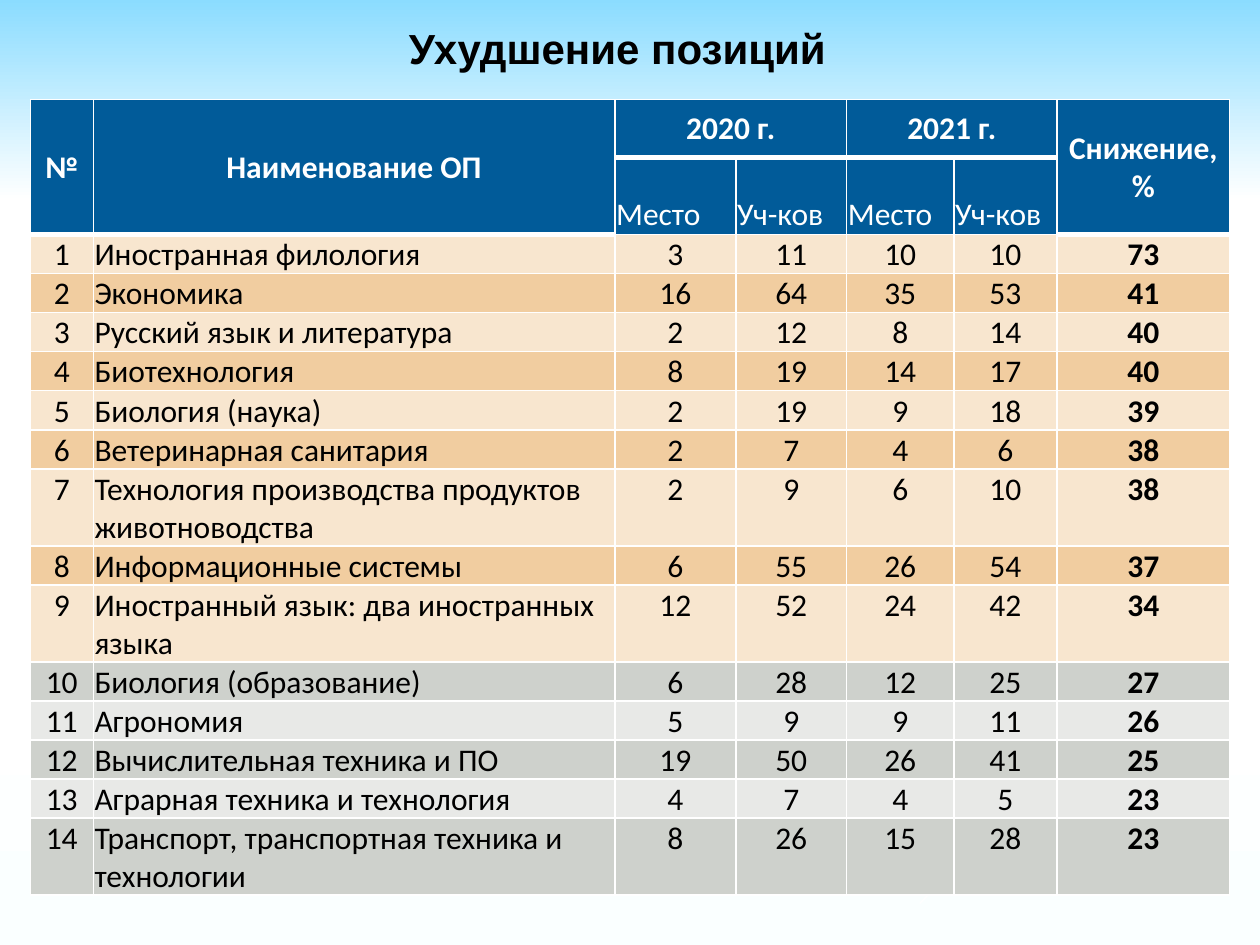
from lxml import etree
from pptx import Presentation
from pptx import util as u
from pptx.dml.color import RGBColor
from pptx.enum import shapes, text
from pptx.oxml.ns import qn

COLORS = {"white": "FFFFFF", "black": "000000", "header": "015B99",
          "orange": "F1CDA0", "cream": "F8E6CF", "grey": "CED1CC", "pale": "E8E9E7"}
SKY = [(2, "FAFFFF"), (26, "FFFFFF"), (79, "FEFFFF"), (100, "8BDCFF")]
RAYS = [(10, 4.26, 9.17, 5.09, 0.75), (10, 4.46, 7.3, 7.17, 0.75),
        (10, 4.55, 8.28, 6.27, 0.75), (9.99, 4.42, 8.42, 5.99, 2.25),
        (9.99, 4.92, 8.85, 6.06, 2.25)]
WIDTHS = [0.5, 4.14, 0.96, 0.88, 0.85, 0.82, 1.37]
HEADERS = [["№", "Наименование ОП", "2020 г.", "", "2021 г.", "", "Снижение, %"],
           ["", "", "Место", "Уч-ков", "Место", "Уч-ков", ""]]
MERGES = [(0, 0, 1, 0), (0, 1, 1, 1), (0, 2, 0, 3), (0, 4, 0, 5), (0, 6, 1, 6)]
PROGRAMS = [
    ("Иностранная филология", 3, 11, 10, 10, 73),
    ("Экономика", 16, 64, 35, 53, 41),
    ("Русский язык и литература", 2, 12, 8, 14, 40),
    ("Биотехнология", 8, 19, 14, 17, 40),
    ("Биология (наука)", 2, 19, 9, 18, 39),
    ("Ветеринарная санитария", 2, 7, 4, 6, 38),
    ("Технология производства продуктов животноводства", 2, 9, 6, 10, 38),
    ("Информационные системы", 6, 55, 26, 54, 37),
    ("Иностранный язык: два иностранных языка", 12, 52, 24, 42, 34),
    ("Биология (образование)", 6, 28, 12, 25, 27),
    ("Агрономия", 5, 9, 9, 11, 26),
    ("Вычислительная техника и ПО", 19, 50, 26, 41, 25),
    ("Аграрная техника и технология", 4, 7, 4, 5, 23),
    ("Транспорт, транспортная техника и технологии", 8, 26, 15, 28, 23),
]
ORANGE_ROWS = 9
WRAP_LENGTH = 35


def rgb(name):
    return RGBColor.from_string(COLORS[name])


def write(tf, content, font="Calibri", size=18, color="black", bold=False, center=True):
    p = tf.paragraphs[0]
    p.alignment = text.PP_ALIGN.CENTER if center else text.PP_ALIGN.LEFT
    r = p.add_run()
    r.text = content
    r.font.name, r.font.size, r.font.bold = font, u.Pt(size), bold
    r.font.color.rgb = rgb(color)


def add_color(parent, value):
    etree.SubElement(parent, qn("a:srgbClr"), val=value)


def add_borders(cell, top, bottom):
    tc_pr = cell._tc.get_or_add_tcPr()
    for side, width in (("L", 1), ("R", 1), ("T", top), ("B", bottom)):
        ln = etree.SubElement(tc_pr, qn(f"a:ln{side}"), w=str(u.Pt(width)))
        add_color(etree.SubElement(ln, qn("a:solidFill")), COLORS["white"])


def body_fill(i):
    dark, light = ("orange", "cream") if i < ORANGE_ROWS else ("grey", "pale")
    return dark if i % 2 else light


class SlideBuilder:
    """Builds slide elements in one shared style."""

    def __init__(self, prs):
        self.s = prs.slides.add_slide(prs.slide_layouts[6])

    def background(self, stops):
        fill = self.s.background.fill
        fill.gradient()
        fill.gradient_angle = 90
        gs_list = self.s._element.xpath(".//a:gsLst")[0]
        for gs in list(gs_list):
            gs_list.remove(gs)
        for pos, value in stops:
            add_color(etree.SubElement(gs_list, qn("a:gs"), pos=str(pos * 1000)), value)

    def line(self, x1, y1, x2, y2, width):
        sp = self.s.shapes.add_connector(shapes.MSO_CONNECTOR.STRAIGHT,
                                         *map(u.Inches, (x1, y1, x2, y2)))
        sp.line.color.rgb = rgb("white")
        sp.line.width = u.Pt(width)
        etree.SubElement(sp._element.spPr, qn("a:effectLst"))

    def title(self, content, *box):
        tf = self.s.shapes.add_textbox(*map(u.Inches, box)).text_frame
        tf.word_wrap = True
        write(tf, content, font="Arial", size=24, bold=True)

    def cell(self, cell, content, fill, anchor, top=1, bottom=1, **style):
        cell.margin_left = cell.margin_right = cell.margin_top = u.Inches(0.01)
        cell.margin_bottom = 0
        cell.vertical_anchor = anchor
        add_borders(cell, top, bottom)
        cell.fill.solid()
        cell.fill.fore_color.rgb = rgb(fill)
        if content:
            write(cell.text_frame, content, **style)

    def table(self, left, top, headers, programs):
        heights = [0.46, 0.61] + [0.61 if len(p[0]) > WRAP_LENGTH else 0.31 for p in programs]
        box = map(u.Inches, (left, top, sum(WIDTHS), sum(heights)))
        table = self.s.shapes.add_table(len(heights), len(WIDTHS), *box).table
        table.first_row = table.horz_banding = False
        for col, width in zip(table.columns, WIDTHS):
            col.width = u.Inches(width)
        for row, height in zip(table.rows, heights):
            row.height = u.Inches(height)
        for r1, c1, r2, c2 in MERGES:
            table.cell(r1, c1).merge(table.cell(r2, c2))
        thick_rows = [1 if 2 <= c <= 5 else 2 for c in range(len(WIDTHS))]
        for r, row in enumerate(headers):
            anchor = text.MSO_ANCHOR.BOTTOM if r else text.MSO_ANCHOR.MIDDLE
            for c, content in enumerate(row):
                self.cell(table.cell(r, c), content, "header", anchor,
                          top=3 if r == thick_rows[c] else 1,
                          bottom=3 if r == 0 or r + 1 == thick_rows[c] else 1,
                          color="white", bold=r == 0, center=r == 0)
        for i, program in enumerate(programs):
            for c, value in enumerate((i + 1, *program)):
                self.cell(table.cell(i + 2, c), str(value), body_fill(i), text.MSO_ANCHOR.TOP,
                          top=3 if i + 2 == thick_rows[c] else 1,
                          bold=c == 6, center=c != 1)


def main():
    prs = Presentation()
    prs.slide_width, prs.slide_height = u.Inches(10), u.Inches(7.5)
    slide = SlideBuilder(prs)
    slide.background(SKY)
    for ray in RAYS:
        slide.line(*ray)
    slide.title("Ухудшение позиций", 0.35, 0.13, 9.1, 0.5)
    slide.table(0.24, 0.79, HEADERS, PROGRAMS)
    prs.save("out.pptx")


if __name__ == "__main__":
    main()
